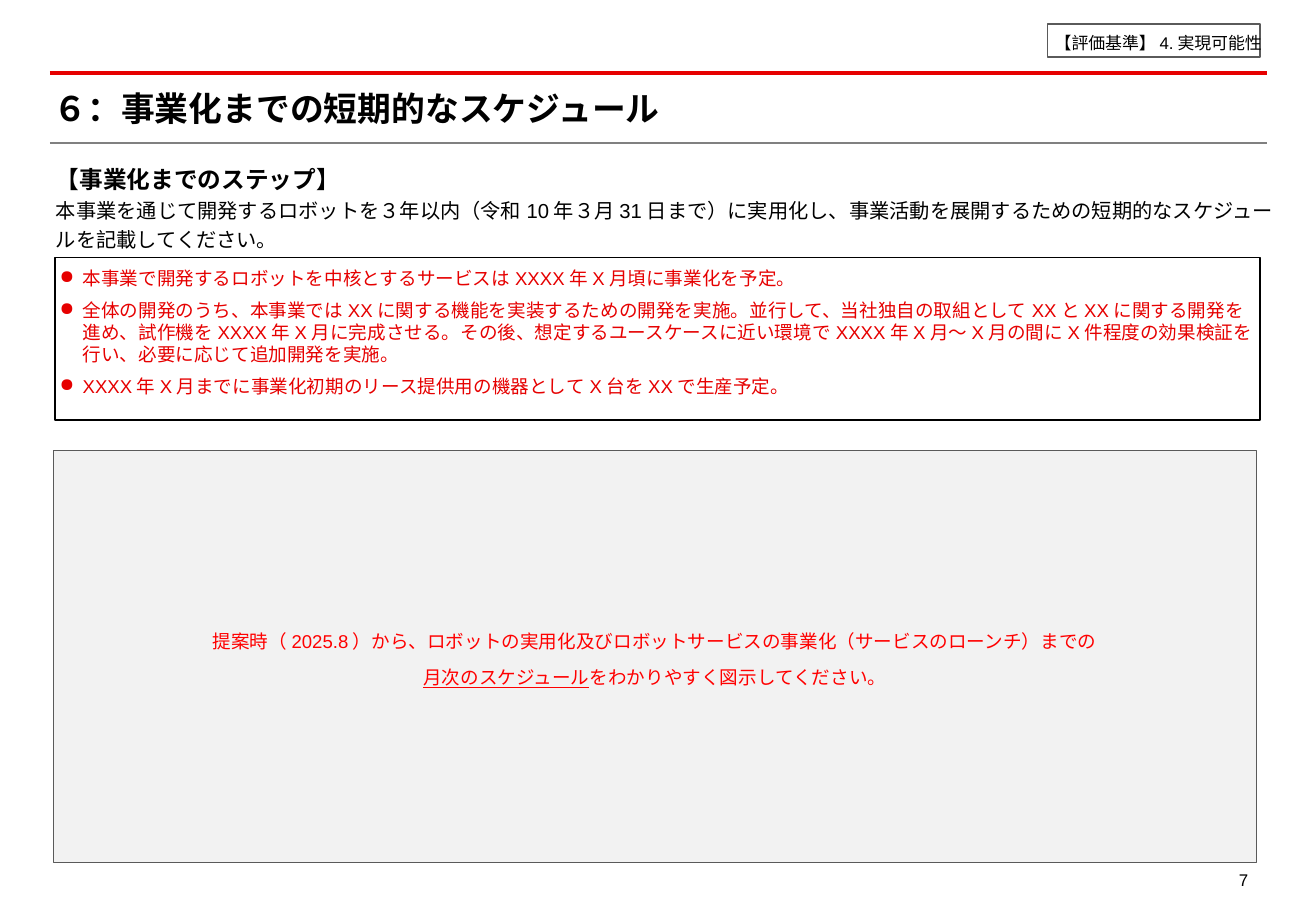
from lxml import etree
from pptx import Presentation
from pptx.dml.color import RGBColor
from pptx.enum.shapes import MSO_CONNECTOR, MSO_SHAPE
from pptx.enum.text import MSO_ANCHOR, MSO_AUTO_SIZE, PP_ALIGN
from pptx.oxml import parse_xml
from pptx.oxml.ns import nsdecls, qn
from pptx.util import Inches, Pt

LINE = MSO_CONNECTOR.STRAIGHT
RECT = MSO_SHAPE.RECTANGLE
TOP, MIDDLE = MSO_ANCHOR.TOP, MSO_ANCHOR.MIDDLE
LEFT, CENTER, RIGHT = PP_ALIGN.LEFT, PP_ALIGN.CENTER, PP_ALIGN.RIGHT
FIXED = MSO_AUTO_SIZE.NONE

BLACK = RGBColor(0, 0, 0)
WHITE = RGBColor(255, 255, 255)
CRIMSON = RGBColor(0xE6, 0, 0)
RED = RGBColor(255, 0, 0)
GRAY = RGBColor(0x80, 0x80, 0x80)
PALE = RGBColor(0xF2, 0xF2, 0xF2)
DARK = RGBColor(0x5A, 0x5A, 0x5A)

HEAD = "【事業化までのステップ】"
LEAD = ("本事業を通じて開発するロボットを３年以内（令和10年３月31日まで）に実用化し、"
        "事業活動を展開するための短期的なスケジュールを記載してください。")
STEPS = [
    "本事業で開発するロボットを中核とするサービスはXXXX年X月頃に事業化を予定。",
    "全体の開発のうち、本事業ではXXに関する機能を実装するための開発を実施。"
    "並行して、当社独自の取組としてXXとXXに関する開発を進め、試作機をXXXX年X月に完成させる。"
    "その後、想定するユースケースに近い環境でXXXX年X月～X月の間にX件程度の効果検証を行い、"
    "必要に応じて追加開発を実施。",
    "XXXX年X月までに事業化初期のリース提供用の機器としてX台をXXで生産予定。",
]
PLAN = "提案時（2025.8）から、ロボットの実用化及びロボットサービスの事業化（サービスのローンチ）までの"


def setup(frame, insets, anchor=TOP, wrap=True):
    """Set the margins, anchor and wrapping of a text frame."""
    frame.auto_size = FIXED
    frame.word_wrap = wrap
    frame.vertical_anchor = anchor
    (frame.margin_left, frame.margin_top,
     frame.margin_right, frame.margin_bottom) = map(Inches, insets)


def write(frame, index, text, size, color=BLACK, bold=False, align=LEFT,
          space=1.0, before=0):
    """Fill one paragraph of a frame and return it."""
    para = frame.add_paragraph() if index else frame.paragraphs[0]
    if text:
        para.add_run().text = text
    para.alignment = align
    para.line_spacing = space
    para.space_before = Pt(before)
    font = para.font
    font.name, font.size, font.bold = "Arial", Pt(size), bold
    font.color.rgb = color
    return para


def bullet(para):
    """Give a paragraph a hanging red bullet."""
    props = para._p.get_or_add_pPr()
    indent = Inches(0.19)
    props.set("marL", str(indent))
    props.set("indent", str(-indent))
    for xml in (f'<a:buClr {nsdecls("a")}><a:srgbClr val="{CRIMSON}"/></a:buClr>',
                f'<a:buChar {nsdecls("a")} char="●"/>'):
        props.insert_element_before(parse_xml(xml), "a:tabLst", "a:defRPr", "a:extLst")


def frame_box(slide, box, line, fill=None):
    """Draw an outlined rectangle and return its text frame."""
    shape = slide.shapes.add_shape(RECT, *map(Inches, box))
    shape.shadow.inherit = False
    if fill is None:
        shape.fill.background()
    else:
        shape.fill.solid()
        shape.fill.fore_color.rgb = fill
    shape.line.color.rgb = line
    shape.line.width = Pt(1)
    return shape.text_frame


def rule(slide, left, top, width, color, weight):
    """Draw a horizontal rule."""
    line = slide.shapes.add_connector(
        LINE, *map(Inches, (left, top, left + width, top)))
    line.line.color.rgb = color
    line.line.width = Pt(weight)
    etree.SubElement(line._element.spPr, qn("a:effectLst"))


def header(slide, box):
    """Place the title between its two rules."""
    left, top, width, height = box
    rule(slide, left, top, width, CRIMSON, 2)
    rule(slide, left, top + height, width, GRAY, 1.25)
    title = slide.shapes.title
    title.left, title.top = Inches(left + 0.03), Inches(top + 0.12)
    title.width, title.height = Inches(width - 0.1), Inches(0.34)
    setup(title.text_frame, (0, 0, 0, 0), MIDDLE)
    write(title.text_frame, 0, "６：事業化までの短期的なスケジュール", 20, bold=True)


def intro(slide, box):
    """Place the heading and its instruction."""
    frame = slide.shapes.add_textbox(*map(Inches, box)).text_frame
    setup(frame, (0, 0, 0, 0))
    write(frame, 0, HEAD, 14, bold=True, space=1.2)
    write(frame, 1, LEAD, 12, space=1.2)


def steps(slide, box):
    """Place the box of bulleted steps."""
    frame = frame_box(slide, box, BLACK, WHITE)
    setup(frame, (0.04, 0.08, 0.02, 0.02))
    for index, text in enumerate(STEPS):
        para = write(frame, index, text, 11, CRIMSON)
        para.space_after = Pt(5.5)
        bullet(para)


def chart_area(slide, box):
    """Place the panel reserved for the schedule."""
    frame = frame_box(slide, box, DARK, PALE)
    setup(frame, [0.02] * 4, MIDDLE, False)
    style = dict(size=11, color=RED, align=CENTER, space=1.2, before=5.5)
    write(frame, 0, PLAN, **style)
    para = write(frame, 1, "月次のスケジュール", **style)
    para.runs[0].font.underline = True
    para.add_run().text = "をわかりやすく図示してください。"


def tag(slide, box):
    """Place the criterion tag."""
    frame = frame_box(slide, box, DARK)
    setup(frame, (0.06, 0.02, 0.02, 0.02), MIDDLE, False)
    write(frame, 0, "【評価基準】4.実現可能性", 10, space=1.2, before=5)


def number(slide, box):
    """Place the page number."""
    frame = slide.shapes.add_textbox(*map(Inches, box)).text_frame
    setup(frame, (0.1, 0.05, 0.1, 0.05))
    write(frame, 0, "7", 10, align=RIGHT, space=1.2, before=5)


def main():
    """Build and save the slide."""
    deck = Presentation()
    deck.slide_width, deck.slide_height = Inches(10.83), Inches(7.5)
    slide = deck.slides.add_slide(deck.slide_layouts[5])
    number(slide, (9.93, 7.08, 0.44, 0.28))
    header(slide, (0.41, 0.6, 10.02, 0.58))
    intro(slide, (0.46, 1.31, 10.05, 0.74))
    steps(slide, (0.45, 2.12, 9.92, 1.34))
    chart_area(slide, (0.44, 3.71, 9.9, 3.39))
    tag(slide, (8.62, 0.2, 1.75, 0.27))
    deck.save("out.pptx")


if __name__ == "__main__":
    main()
